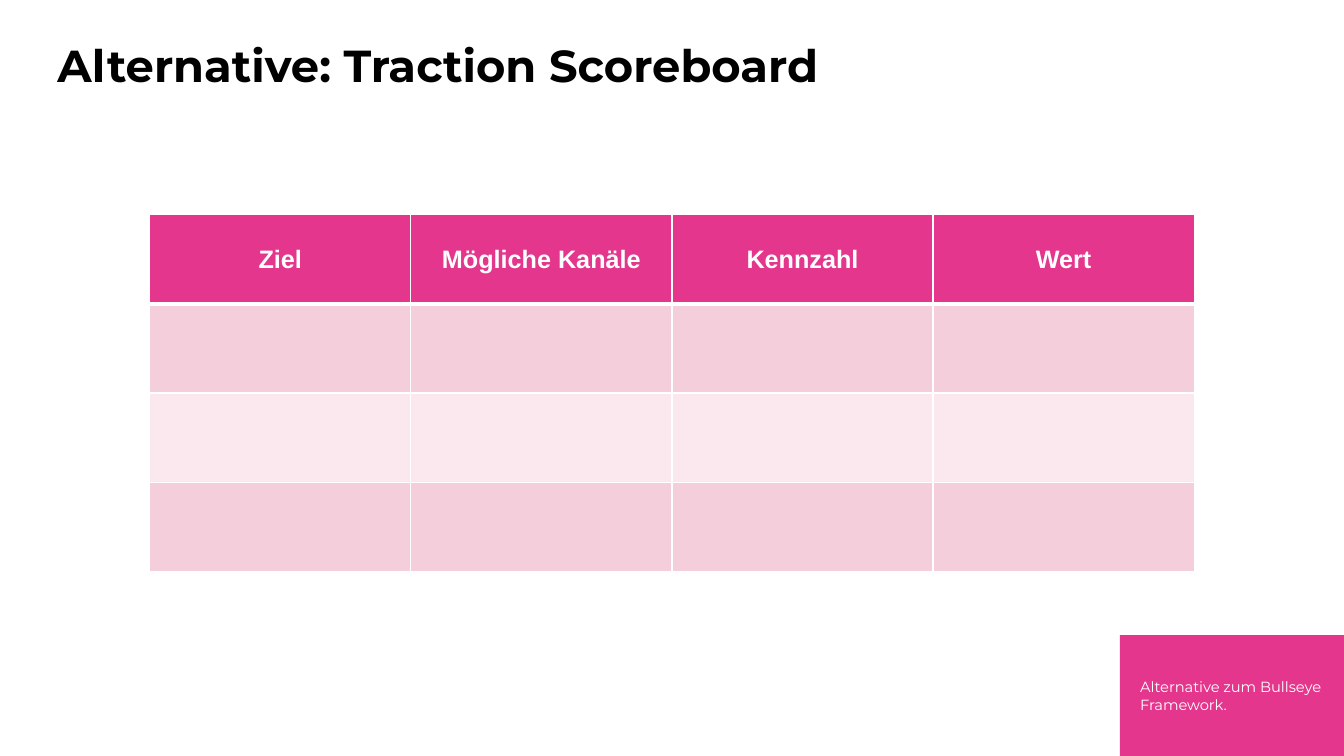
from lxml import etree
from pptx import Presentation
from pptx.dml.color import RGBColor
from pptx.enum.shapes import MSO_SHAPE
from pptx.enum.text import MSO_ANCHOR, PP_ALIGN
from pptx.oxml.ns import qn
from pptx.util import Inches, Pt

# Content
TITLE = "Alternative: Traction Scoreboard"
HEADINGS = ["Ziel", "Mögliche Kanäle", "Kennzahl", "Wert"]
GOAL_ROWS = 3
NOTE = "Alternative zum Bullseye Framework."

# Style
PINK = RGBColor(0xE4, 0x36, 0x8C)
BAND_DARK = RGBColor(0xF4, 0xCE, 0xDA)
BAND_LIGHT = RGBColor(0xFA, 0xE8, 0xEE)
WHITE = RGBColor(0xFF, 0xFF, 0xFF)
BLACK = RGBColor(0, 0, 0)
MIDDLE, TOP = MSO_ANCHOR.MIDDLE, MSO_ANCHOR.TOP
LEFT, CENTER = PP_ALIGN.LEFT, PP_ALIGN.CENTER

# Layout, in inches
SLIDE_W, SLIDE_H = 13.33, 7.5
COLUMN_W, ROW_H = 2.59, 0.885
TABLE_TOP = 2.13
NOTE_W, NOTE_H = SLIDE_W / 6, 1.2


def write(frame, text, font, size, color, bold=False, align=LEFT, anchor=TOP):
    frame.text = text
    frame.word_wrap = True
    frame.vertical_anchor = anchor
    paragraph = frame.paragraphs[0]
    paragraph.alignment = align
    for run in paragraph.runs:
        run.font.name = font
        run.font.size = Pt(size)
        run.font.bold = bold
        run.font.color.rgb = color


def set_margins(frame, side):
    frame.margin_left = frame.margin_right = Inches(side)
    frame.margin_top = frame.margin_bottom = 0


def add_borders(cell, widths):
    properties = cell._tc.get_or_add_tcPr()
    for side, width in widths.items():
        line = etree.SubElement(properties, qn(f"a:ln{side}"), w=str(Pt(width)))
        fill = etree.SubElement(line, qn("a:solidFill"))
        etree.SubElement(fill, qn("a:srgbClr"), val=str(WHITE))


def add_title(slide):
    title = slide.shapes.add_textbox(Inches(0.57), Inches(0.37), Inches(10.43), Inches(0.54))
    set_margins(title.text_frame, 0)
    write(title.text_frame, TITLE, "Montserrat", 32, BLACK, bold=True)


def add_scoreboard(slide):
    rows, columns = GOAL_ROWS + 1, len(HEADINGS)
    width = columns * COLUMN_W
    scoreboard = slide.shapes.add_table(
        rows, columns, Inches((SLIDE_W - width) / 2), Inches(TABLE_TOP),
        Inches(width), Inches(rows * ROW_H)).table
    for row in range(rows):
        for column in range(columns):
            cell = scoreboard.cell(row, column)
            # The line under the heading row is thicker
            add_borders(cell, {"L": 1, "R": 1, "T": 3 if row == 1 else 1,
                               "B": 3 if row == 0 else 1})
            cell.fill.solid()
            if row == 0:
                cell.fill.fore_color.rgb = PINK
                write(cell.text_frame, HEADINGS[column], "Arial", 18, WHITE,
                      bold=True, align=CENTER)
                cell.vertical_anchor = MIDDLE
            else:
                cell.fill.fore_color.rgb = BAND_DARK if row % 2 else BAND_LIGHT


def add_note(slide):
    note = slide.shapes.add_shape(
        MSO_SHAPE.RECTANGLE, Inches(SLIDE_W - NOTE_W), Inches(SLIDE_H - NOTE_H),
        Inches(NOTE_W), Inches(NOTE_H))
    note.shadow.inherit = False
    note.fill.solid()
    note.fill.fore_color.rgb = PINK
    note.line.fill.background()
    set_margins(note.text_frame, 0.2)
    write(note.text_frame, NOTE, "Montserrat", 10.5, WHITE, anchor=MIDDLE)


def main():
    deck = Presentation()
    deck.slide_width, deck.slide_height = Inches(SLIDE_W), Inches(SLIDE_H)
    slide = deck.slides.add_slide(deck.slide_layouts[6])
    add_title(slide)
    add_scoreboard(slide)
    add_note(slide)
    deck.save("out.pptx")


if __name__ == "__main__":
    main()
